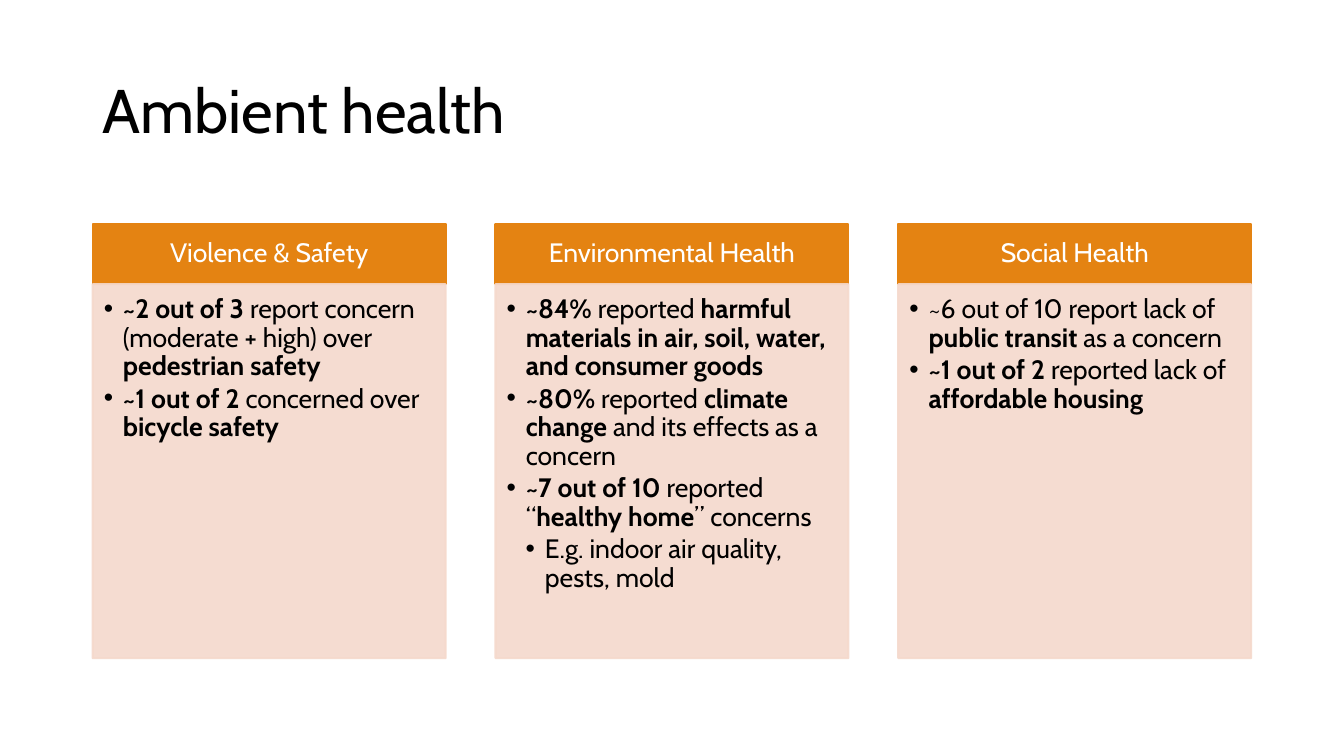
import pptx
import pptx.dml.color
import pptx.enum.shapes
import pptx.enum.text
import pptx.oxml.ns
import pptx.util
from lxml import etree

Inches, Pt = pptx.util.Inches, pptx.util.Pt
ALIGN = pptx.enum.text.PP_ALIGN
ANCHOR = pptx.enum.text.MSO_ANCHOR

# Grid: three equal columns, a header row and a body row
LEFT, PITCH, COL_W = 0.92, 3.995, 3.5
HEAD_TOP, HEAD_H, BODY_H = 2.22, 0.6, 3.71
INDENT = 0.19

FONT = "Cabin"
BLACK, WHITE, ORANGE, PEACH = "000000", "FFFFFF", "E48312", "F5D9CC"

HEAD_FRAME = {"vertical_anchor": ANCHOR.MIDDLE,
              "margin_left": Inches(0.15), "margin_right": Inches(0.15),
              "margin_top": Inches(0.08), "margin_bottom": Inches(0.08)}
BODY_FRAME = {"vertical_anchor": ANCHOR.TOP,
              "margin_left": Inches(0.11), "margin_right": Inches(0.15),
              "margin_top": Inches(0.11), "margin_bottom": Inches(0.17)}

# Header, then (level, text) items; asterisks enclose bold words
COLUMNS = [
    ("Violence & Safety", [
        (1, "*~2 out of 3 *report concern (moderate + high) over *pedestrian safety*"),
        (1, "*~1 out of 2 *concerned over *bicycle safety*"),
    ]),
    ("Environmental Health", [
        (1, "*~84% *reported *harmful materials in air, soil, water, and consumer goods*"),
        (1, "*~80% *reported *climate change *and its effects as a concern"),
        (1, "*~7 out of 10 *reported “*healthy home*” concerns"),
        (2, "E.g. indoor air quality, pests, mold"),
    ]),
    ("Social Health", [
        (1, "~6 out of 10 report lack of *public transit* as a concern"),
        (1, "*~1 out of 2 *reported lack of *affordable housing*"),
    ]),
]


def rgb(value):
    return pptx.dml.color.RGBColor.from_string(value)


def apply(target, values):
    for name, value in values.items():
        setattr(target, name, value)


def sub(parent, tag, **attrs):
    return etree.SubElement(parent, pptx.oxml.ns.qn(tag), attrs)


def add_runs(p, text, size, color):
    for i, part in enumerate(text.split("*")):
        if part:
            r = p.add_run()
            r.text = part
            apply(r.font, {"name": FONT, "size": Pt(size), "bold": i % 2 == 1})
            r.font.color.rgb = rgb(color)


def add_title(s, text):
    sp = s.shapes.add_textbox(Inches(LEFT), Inches(0.4), Inches(11.5), Inches(1.45))
    tf = sp.text_frame
    apply(tf, {"word_wrap": True, "vertical_anchor": ANCHOR.MIDDLE})
    p = tf.paragraphs[0]
    p.line_spacing = 0.9
    add_runs(p, text, 44, BLACK)


def add_panel(s, col, top, height, color, frame, opacity=100):
    """Draw a filled rectangle in a grid column and return its text frame."""
    sp = s.shapes.add_shape(pptx.enum.shapes.MSO_SHAPE.RECTANGLE,
                            Inches(LEFT + col * PITCH), Inches(top),
                            Inches(COL_W), Inches(height))
    sp.shadow.inherit = False
    sp.line.width = Pt(1.5)
    for fill in (sp.fill, sp.line.fill):
        fill.solid()
        fill.fore_color.rgb = rgb(color)
    if opacity < 100:
        for clr in sp._element.spPr.iter(pptx.oxml.ns.qn("a:srgbClr")):
            sub(clr, "a:alpha", val=str(opacity * 1000))
    apply(sp.text_frame, {"word_wrap": True, **frame})
    return sp.text_frame


def add_header(s, col, text):
    tf = add_panel(s, col, HEAD_TOP, HEAD_H, ORANGE, HEAD_FRAME)
    p = tf.paragraphs[0]
    apply(p, {"alignment": ALIGN.CENTER, "line_spacing": 0.9})
    add_runs(p, text, 19, WHITE)


def add_bullets(s, col, items):
    tf = add_panel(s, col, HEAD_TOP + HEAD_H, BODY_H, PEACH, BODY_FRAME, 90)
    for i, (level, text) in enumerate(items):
        p = tf.add_paragraph() if i else tf.paragraphs[0]
        apply(p, {"level": level, "alignment": ALIGN.LEFT,
                  "line_spacing": 0.9, "space_after": Pt(2.5)})
        pPr = p._p.get_or_add_pPr()
        pPr.set("marL", str(Inches(INDENT * level)))
        pPr.set("indent", str(Inches(-INDENT)))
        sub(pPr, "a:buFont", typeface="Arial")
        sub(pPr, "a:buChar", char="•")
        add_runs(p, text, 19, BLACK)


def main():
    prs = pptx.Presentation()
    prs.slide_width, prs.slide_height = Inches(13.33), Inches(7.5)
    s = prs.slides.add_slide(prs.slide_layouts[6])

    add_title(s, "Ambient health")
    for col, (header, items) in enumerate(COLUMNS):
        add_header(s, col, header)
        add_bullets(s, col, items)

    prs.save("out.pptx")


if __name__ == "__main__":
    main()
